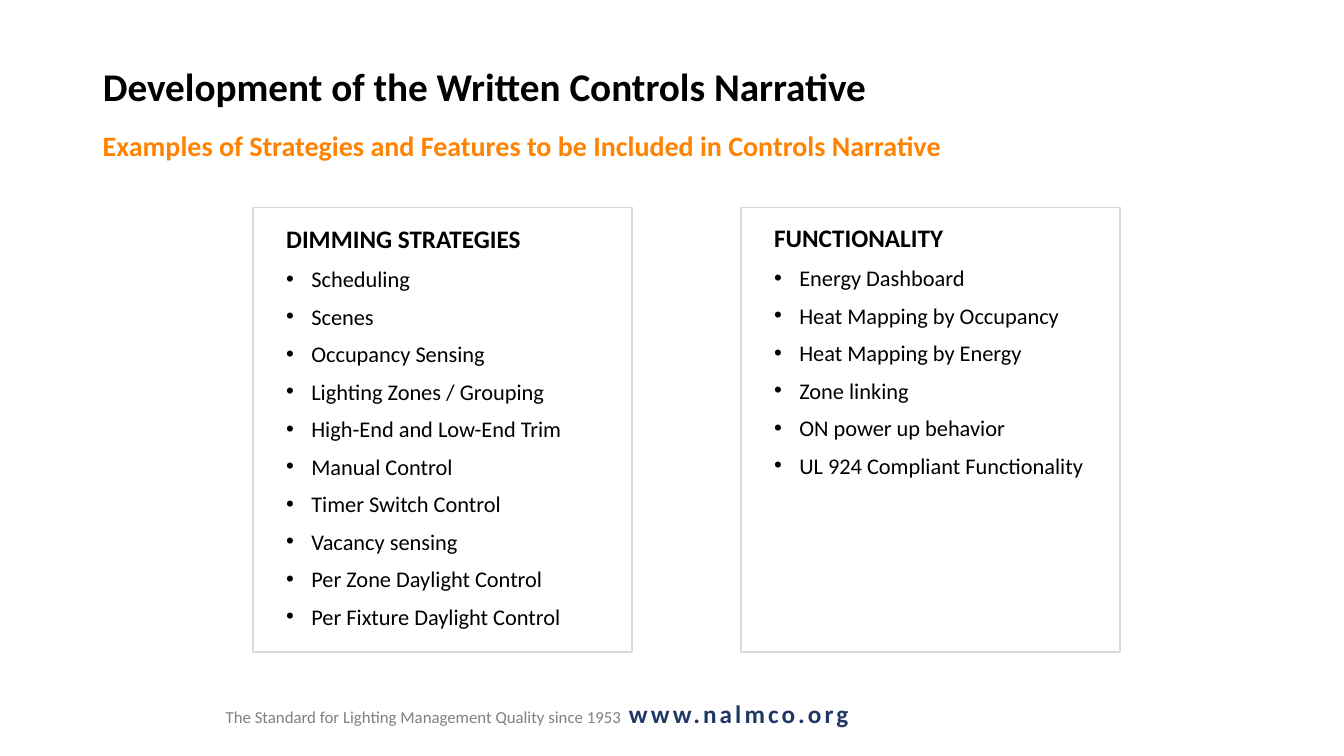
from dataclasses import dataclass

from lxml import etree
from pptx import Presentation
from pptx import util as u
from pptx.dml.color import RGBColor
from pptx.enum import shapes, text
from pptx.oxml import ns
from pptx.slide import Slide
from pptx.text.text import Font, TextFrame

BLACK = RGBColor(0, 0, 0)
WHITE = RGBColor(255, 255, 255)
ORANGE = RGBColor(0xFF, 0x82, 0x00)
GRAY = RGBColor(0x80, 0x80, 0x80)
NAVY = RGBColor(0x20, 0x38, 0x64)
BORDER = RGBColor(0xD9, 0xD9, 0xD9)

PANEL_TOP, PANEL_WIDTH, PANEL_HEIGHT = 2.06, 3.76, 4.41
TEXT_INSET = 0.23


@dataclass
class Panel:
    left: float
    text_top: float
    heading: str
    items: list[str]


PANELS = [
    Panel(2.51, 2.15, "DIMMING STRATEGIES", [
        "Scheduling",
        "Scenes",
        "Occupancy Sensing",
        "Lighting Zones / Grouping",
        "High-End and Low-End Trim",
        "Manual Control",
        "Timer Switch Control",
        "Vacancy sensing",
        "Per Zone Daylight Control",
        "Per Fixture Daylight Control",
    ]),
    Panel(7.35, 2.14, "FUNCTIONALITY", [
        "Energy Dashboard",
        "Heat Mapping by Occupancy",
        "Heat Mapping by Energy",
        "Zone linking",
        "ON power up behavior",
        "UL 924 Compliant Functionality",
    ]),
]


def set_font(font: Font, size: float, color: RGBColor, bold: bool = False) -> None:
    font.name = "Calibri"
    font.size = u.Pt(size)
    font.bold = bold
    font.color.rgb = color


def add_text_frame(slide: Slide, left: float, top: float,
                   width: float, height: float) -> TextFrame:
    box = slide.shapes.add_textbox(u.Inches(left), u.Inches(top),
                                   u.Inches(width), u.Inches(height))
    box.text_frame.word_wrap = True
    return box.text_frame


def add_title(slide: Slide) -> None:
    title = slide.shapes.title
    title.left, title.top = u.Inches(0.92), u.Inches(0.4)
    title.width, title.height = u.Inches(12.24), u.Inches(0.97)
    title.text_frame.vertical_anchor = text.MSO_ANCHOR.MIDDLE
    title.text_frame.text = "Development of the Written Controls Narrative"
    line = title.text_frame.paragraphs[0]
    line.alignment = text.PP_ALIGN.LEFT
    line.line_spacing = 0.9
    set_font(line.font, 28, BLACK, True)


def add_subtitle(slide: Slide) -> None:
    line = add_text_frame(slide, 0.92, 1.23, 8.95, 0.53).paragraphs[0]
    line.text = "Examples of Strategies and Features to be Included in Controls Narrative"
    set_font(line.font, 20, ORANGE, True)


def add_panel(slide: Slide, panel: Panel) -> None:
    frame = slide.shapes.add_shape(
        shapes.MSO_SHAPE.RECTANGLE, u.Inches(panel.left), u.Inches(PANEL_TOP),
        u.Inches(PANEL_WIDTH), u.Inches(PANEL_HEIGHT))
    frame.shadow.inherit = False
    frame.fill.solid()
    frame.fill.fore_color.rgb = WHITE
    frame.line.color.rgb = BORDER
    frame.line.width = u.Pt(1)

    content = add_text_frame(slide, panel.left + TEXT_INSET, panel.text_top,
                             PANEL_WIDTH - TEXT_INSET, 4.33)
    heading = content.paragraphs[0]
    heading.text = panel.heading
    heading.line_spacing = 1.07
    heading.space_after = u.Pt(8)
    set_font(heading.font, 18, BLACK, True)

    for item in panel.items:
        entry = content.add_paragraph()
        entry.text = item
        entry.level = 1
        entry.space_after = u.Pt(7.6)
        properties = entry._p.get_or_add_pPr()
        properties.set("marL", str(u.Inches(0.25)))
        properties.set("indent", str(-u.Inches(0.25)))
        etree.SubElement(properties, ns.qn("a:buFont")).set("typeface", "Arial")
        etree.SubElement(properties, ns.qn("a:buChar")).set("char", "•")
        set_font(entry.font, 16, BLACK)


def add_footer(slide: Slide) -> None:
    line = add_text_frame(slide, 2.14, 6.75, 9.67, 0.4).paragraphs[0]
    motto, gap, website = (line.add_run() for _ in range(3))
    motto.text = "The Standard for Lighting Management Quality since 1953"
    set_font(motto.font, 12, GRAY)
    gap.text = "\t"
    set_font(gap.font, 27, BLACK)
    website.text = "www.nalmco.org"
    set_font(website.font, 18, NAVY, True)
    website._r.get_or_add_rPr().set("spc", "220")


def main() -> None:
    deck = Presentation()
    deck.slide_width, deck.slide_height = u.Inches(13.33), u.Inches(7.5)
    slide = deck.slides.add_slide(deck.slide_layouts.get_by_name("Title Only"))
    add_footer(slide)
    add_title(slide)
    add_subtitle(slide)
    for panel in PANELS:
        add_panel(slide, panel)
    deck.save("out.pptx")


if __name__ == "__main__":
    main()
